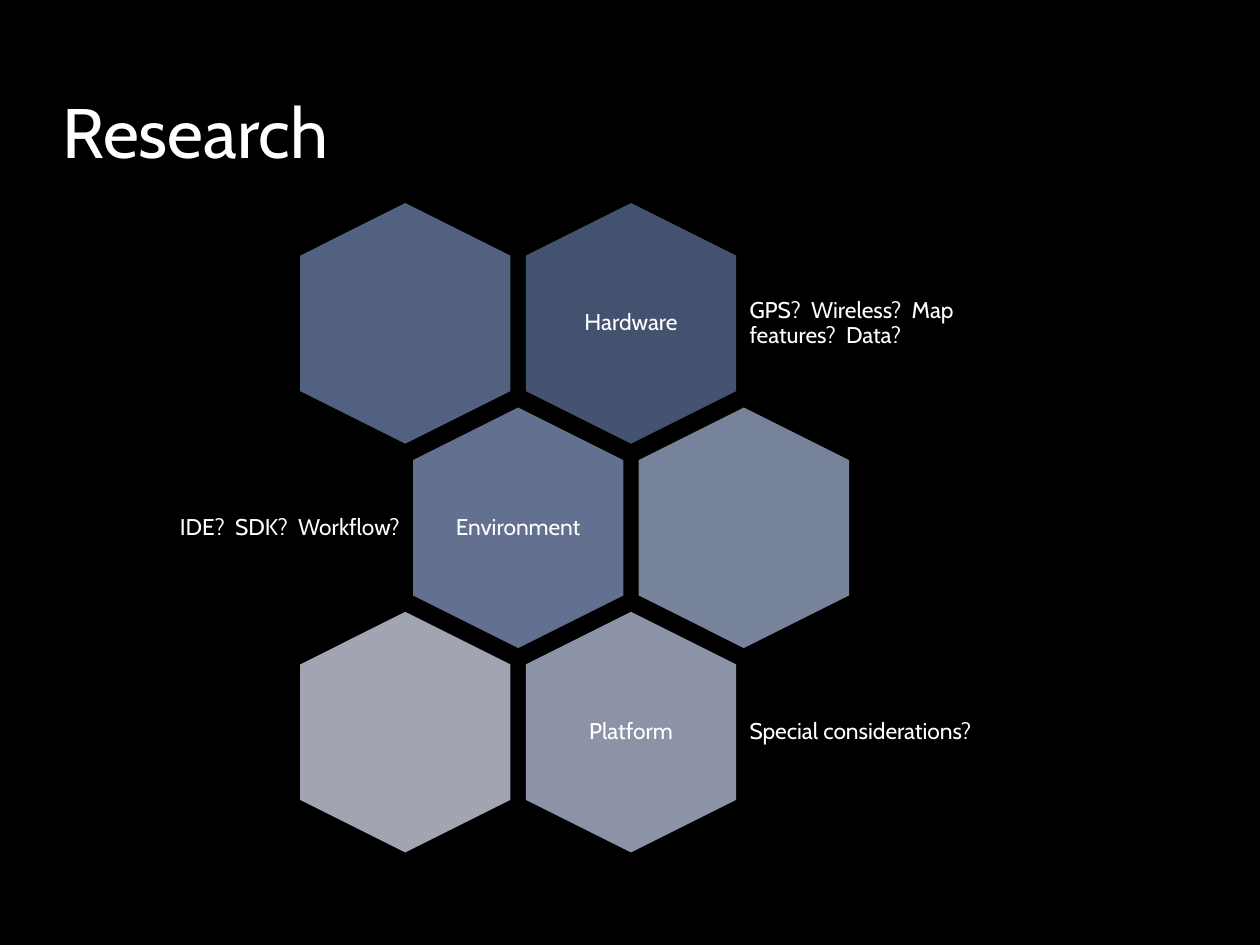
from pptx import Presentation
from pptx.dml.color import RGBColor
from pptx.enum.shapes import MSO_SHAPE as Shape
from pptx.enum.text import MSO_ANCHOR as Anchor, MSO_AUTO_SIZE as AutoSize, PP_ALIGN as Align
from pptx.util import Cm, Pt

BLACK = RGBColor(0x00, 0x00, 0x00)
WHITE = RGBColor(0xFF, 0xFF, 0xFF)
NAVY = RGBColor(0x43, 0x52, 0x6F)
INDIGO = RGBColor(0x52, 0x61, 0x7F)
SLATE = RGBColor(0x63, 0x70, 0x8F)
STEEL = RGBColor(0x77, 0x82, 0x9B)
MIST = RGBColor(0x8C, 0x93, 0xA6)
SILVER = RGBColor(0xA1, 0xA5, 0xB1)
FONT = "Cabin"

HEADING = "Research"
TOPICS = [
    {"topic": "Hardware", "question": "GPS?  Wireless?  Map features?  Data?",
     "fill": NAVY, "partner": INDIGO},
    {"topic": "Environment", "question": "IDE?  SDK?  Workflow?",
     "fill": SLATE, "partner": STEEL},
    {"topic": "Platform", "question": "Special considerations?",
     "fill": MIST, "partner": SILVER},
]

HEX_LENGTH, HEX_WIDTH = 4.85, 4.24
COLUMN_STEP, ROW_STEP = 4.55, 4.12
FIRST_X, FIRST_Y = 8.17, 6.52
TOPIC_WIDTH, TOPIC_HEIGHT = 2.92, 3.35
QUESTION_WIDTH, QUESTION_HEIGHT = 5.4, 2.92
QUESTION_OFFSET = 2.26


def centred_box(x, y, width, height):
    return Cm(x - width / 2), Cm(y - height / 2), Cm(width), Cm(height)


def style(paragraph, size, align):
    paragraph.alignment = align
    paragraph.font.name = FONT
    paragraph.font.size = Pt(size)
    paragraph.font.color.rgb = WHITE


def add_hexagon(slide, x, y, colour):
    hexagon = slide.shapes.add_shape(
        Shape.HEXAGON, *centred_box(x, y, HEX_LENGTH, HEX_WIDTH))
    hexagon.rotation = 90
    hexagon.adjustments[0] = 0.25
    hexagon.fill.solid()
    hexagon.fill.fore_color.rgb = colour
    hexagon.line.fill.background()
    hexagon.shadow.inherit = False


def add_text(slide, text, box, align):
    frame = slide.shapes.add_textbox(*box).text_frame
    frame.word_wrap = True
    frame.vertical_anchor = Anchor.MIDDLE
    frame.margin_left = frame.margin_right = Cm(0.13)
    frame.margin_top = frame.margin_bottom = Cm(0.13)
    paragraph = frame.paragraphs[0]
    paragraph.text = text
    paragraph.line_spacing = 0.9
    style(paragraph, 13, align)


def add_heading(slide):
    heading = slide.shapes.title
    heading.left, heading.top = Cm(1), Cm(0.64)
    heading.width, heading.height = Cm(21.34), Cm(2.97)
    heading.text = HEADING
    frame = heading.text_frame
    frame.auto_size = AutoSize.NONE
    frame.vertical_anchor = Anchor.BOTTOM
    frame.paragraphs[0].space_before = Pt(4)
    style(frame.paragraphs[0], 40, Align.LEFT)


def add_topic(slide, row, entry):
    shifted = row % 2 == 1
    left_x = FIRST_X + (COLUMN_STEP / 2 if shifted else 0)
    right_x = left_x + COLUMN_STEP
    y = FIRST_Y + row * ROW_STEP
    topic_x, partner_x = (left_x, right_x) if shifted else (right_x, left_x)
    side, align = (-1, Align.RIGHT) if shifted else (1, Align.LEFT)
    question_x = topic_x + side * (QUESTION_OFFSET + QUESTION_WIDTH / 2)

    add_hexagon(slide, topic_x, y, entry["fill"])
    add_text(slide, entry["topic"],
             centred_box(topic_x, y, TOPIC_WIDTH, TOPIC_HEIGHT), Align.CENTER)
    add_text(slide, entry["question"],
             centred_box(question_x, y, QUESTION_WIDTH, QUESTION_HEIGHT), align)
    add_hexagon(slide, partner_x, y, entry["partner"])


def main():
    deck = Presentation()
    deck.slide_width, deck.slide_height = Cm(25.4), Cm(19.05)
    slide = deck.slides.add_slide(deck.slide_layouts.get_by_name("Title Only"))
    slide.background.fill.solid()
    slide.background.fill.fore_color.rgb = BLACK
    add_heading(slide)
    for row, entry in enumerate(TOPICS):
        add_topic(slide, row, entry)
    deck.save("out.pptx")


if __name__ == "__main__":
    main()
